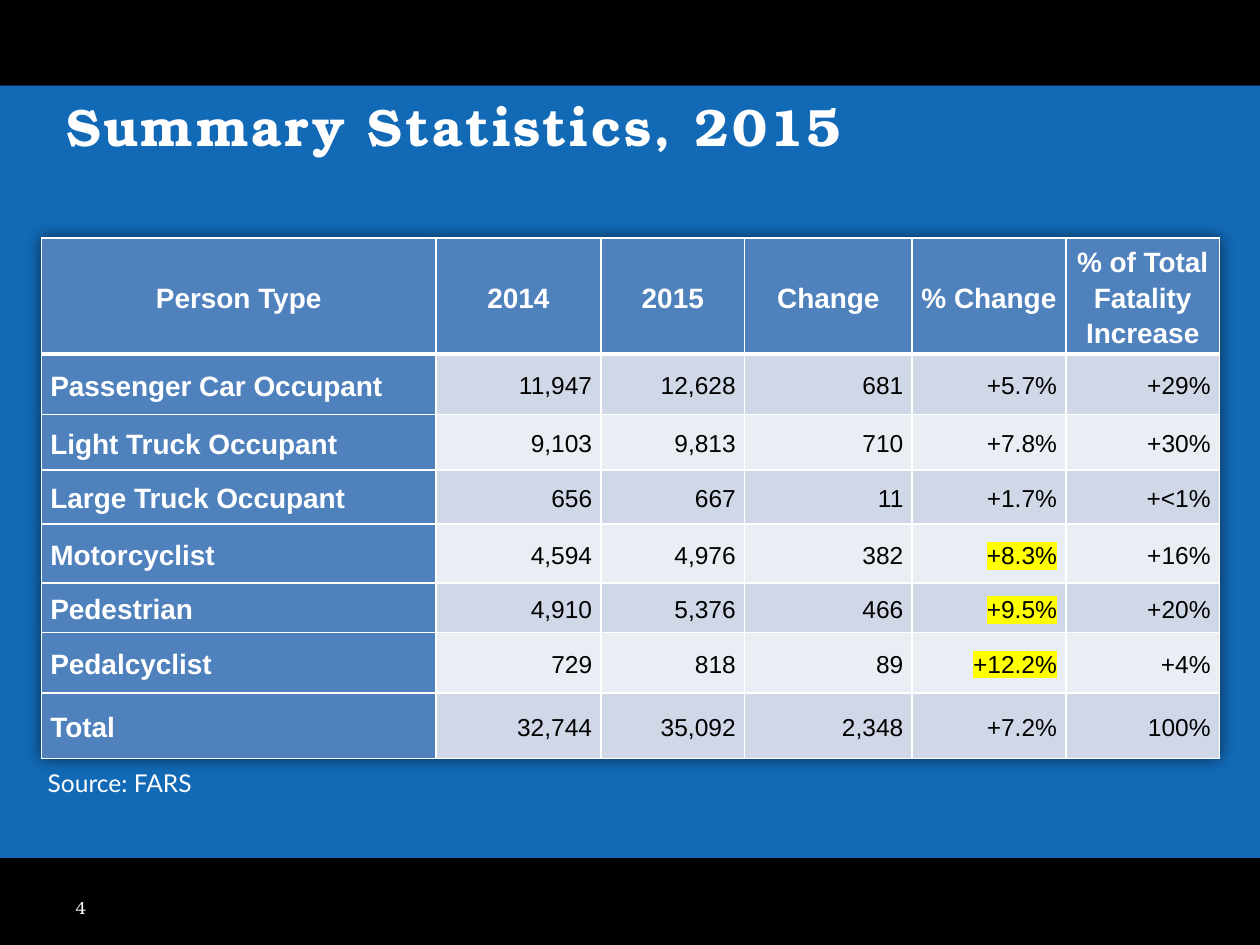
from dataclasses import dataclass
from lxml.etree import SubElement
from pptx import Presentation
from pptx.dml.color import RGBColor
from pptx.enum.shapes import MSO_SHAPE
from pptx.enum.text import MSO_ANCHOR, PP_ALIGN
from pptx.oxml import parse_xml
from pptx.oxml.ns import qn
from pptx.util import Inches, Pt

HEADER = ["Person Type", "2014", "2015", "Change", "% Change", "% of Total Fatality Increase"]
ROWS = [
    ["Passenger Car Occupant", "11,947", "12,628", "681", "+5.7%", "+29%"],
    ["Light Truck Occupant", "9,103", "9,813", "710", "+7.8%", "+30%"],
    ["Large Truck Occupant", "656", "667", "11", "+1.7%", "+<1%"],
    ["Motorcyclist", "4,594", "4,976", "382", "+8.3%", "+16%"],
    ["Pedestrian", "4,910", "5,376", "466", "+9.5%", "+20%"],
    ["Pedalcyclist", "729", "818", "89", "+12.2%", "+4%"],
    ["Total", "32,744", "35,092", "2,348", "+7.2%", "100%"],
]
MARKED = {"+8.3%", "+9.5%", "+12.2%"}
COL_WIDTHS = [3.13, 1.31, 1.14, 1.33, 1.22, 1.22]
ROW_HEIGHTS = [0.87, 0.48, 0.44, 0.43, 0.47, 0.39, 0.48, 0.52]


@dataclass(frozen=True)
class Theme:
    back: str = "000000"
    panel: str = "1269B5"
    head: str = "4F81BD"
    odd: str = "D0D8E8"
    even: str = "E9EDF4"
    light: str = "FFFFFF"
    dark: str = "000000"
    mark: str = "FFFF00"
    serif: str = "TeX Gyre Bonum"
    sans: str = "Arial"
    note: str = "Lato"
    title_size: int = 30
    head_size: int = 16
    body_size: int = 14
    number_size: int = 10


T = Theme()
NS = 'xmlns:a="http://schemas.openxmlformats.org/drawingml/2006/main"'


def paint(fill, color):
    fill.solid()
    fill.fore_color.rgb = RGBColor.from_string(color)


def write(tf, text, font=T.sans, size=T.body_size, color=T.light, bold=False,
          align=PP_ALIGN.LEFT, line=None, spacing=None, mark=None):
    p = tf.paragraphs[0]
    p.alignment = align
    if line:
        p.line_spacing = line
    r = p.add_run()
    r.text = text
    r.font.name, r.font.size, r.font.bold = font, Pt(size), bold
    paint(r.font.fill, color)
    rpr = r.font._element
    if spacing:
        rpr.set("spc", str(round(spacing * 100)))
    if mark:
        rpr.find(qn("a:solidFill")).addnext(parse_xml(
            f'<a:highlight {NS}><a:srgbClr val="{mark}"/></a:highlight>'))


def add_text(s, box, text, anchor=MSO_ANCHOR.TOP, **fmt):
    tf = s.shapes.add_textbox(*map(Inches, box)).text_frame
    tf.word_wrap = True
    tf.vertical_anchor = anchor
    write(tf, text, **fmt)


def set_borders(cell, **widths):
    tcpr = cell._tc.get_or_add_tcPr()
    for side in "LRTB":
        ln = SubElement(tcpr, qn(f"a:ln{side}"), w=str(Pt(widths.get(side, 1))))
        fill = SubElement(ln, qn("a:solidFill"))
        SubElement(fill, qn("a:srgbClr"), val=T.light)


def add_statistics(s):
    frame = s.shapes.add_table(len(ROWS) + 1, len(HEADER), Inches(0.33), Inches(1.89),
                               Inches(sum(COL_WIDTHS)), Inches(sum(ROW_HEIGHTS)))
    table = frame.table
    table._tbl.tblPr.insert(0, parse_xml(
        f'<a:effectLst {NS}><a:outerShdw blurRad="{Inches(0.12)}" dist="0" dir="0">'
        f'<a:srgbClr val="{T.dark}"><a:alpha val="60000"/></a:srgbClr>'
        '</a:outerShdw></a:effectLst>'))
    for col, width in zip(table.columns, COL_WIDTHS):
        col.width = Inches(width)
    for row, height in zip(table.rows, ROW_HEIGHTS):
        row.height = Inches(height)
    for i, values in enumerate([HEADER] + ROWS):
        for j, text in enumerate(values):
            cell = table.cell(i, j)
            cell.margin_left = cell.margin_right = Inches(0.07)
            cell.margin_top = cell.margin_bottom = 0
            cell.vertical_anchor = MSO_ANCHOR.MIDDLE
            set_borders(cell, **({"B": 3} if i == 0 else {"T": 3} if i == 1 else {}))
            heading = i == 0 or j == 0
            paint(cell.fill, T.head if heading else T.odd if i % 2 else T.even)
            align = PP_ALIGN.CENTER if i == 0 else PP_ALIGN.RIGHT if j else PP_ALIGN.LEFT
            write(cell.text_frame, text, size=T.head_size if heading else T.body_size,
                  color=T.light if heading else T.dark, bold=heading, align=align,
                  line=1.15, mark=T.mark if text in MARKED else None)


def main():
    """Build the summary statistics slide."""
    prs = Presentation()
    prs.slide_width, prs.slide_height = Inches(10), Inches(7.5)
    s = prs.slides.add_slide(prs.slide_layouts[6])
    paint(s.background.fill, T.back)
    panel = s.shapes.add_shape(MSO_SHAPE.RECTANGLE, 0, Inches(0.68), Inches(10), Inches(6.13))
    panel.shadow.inherit = False
    paint(panel.fill, T.panel)
    panel.line.fill.background()
    add_text(s, (0.43, 0.7, 9, 0.98), "Summary Statistics, 2015", font=T.serif,
             size=T.title_size, bold=True, spacing=1.5)
    add_text(s, (0.5, 7, 2.33, 0.4), "4", anchor=MSO_ANCHOR.MIDDLE, font=T.serif,
             size=T.number_size)
    add_statistics(s)
    add_text(s, (0.28, 6.05, 1.51, 0.34), "Source: FARS", font=T.note)
    prs.save("out.pptx")


if __name__ == "__main__":
    main()
